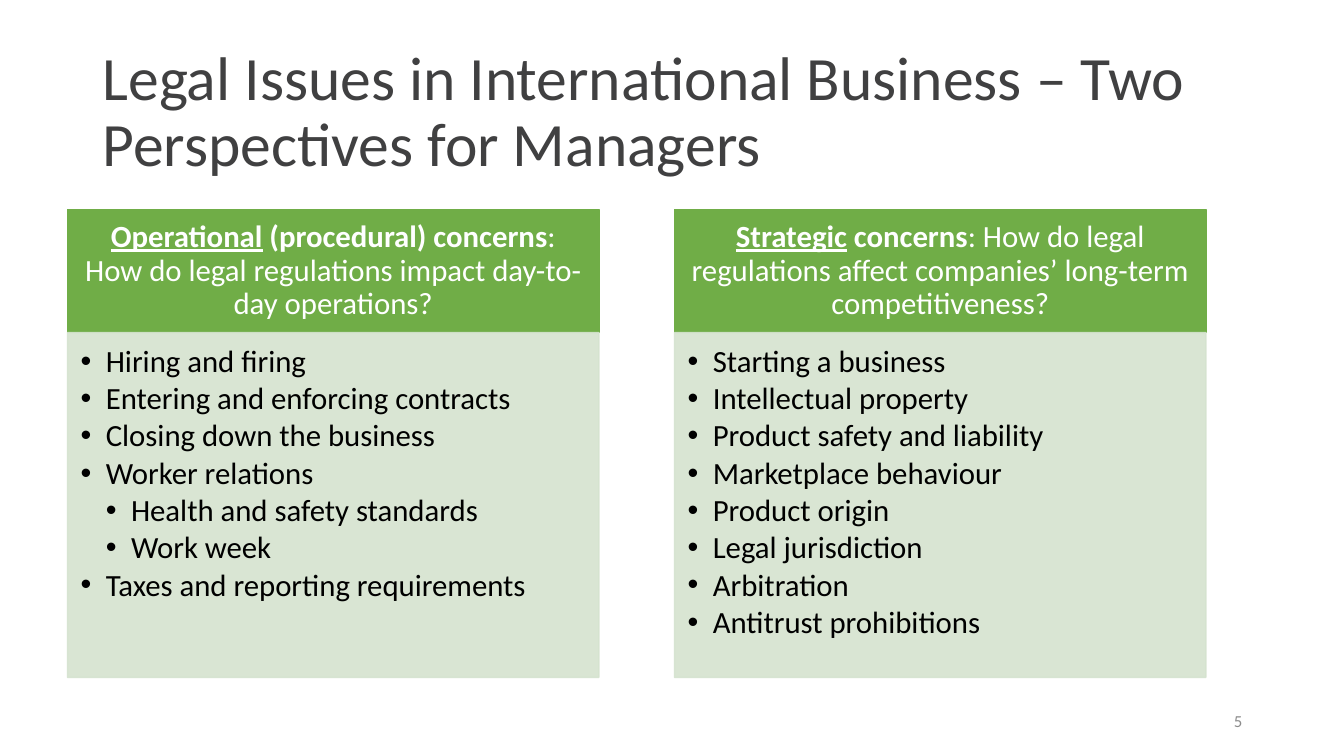
from lxml.etree import SubElement
from pptx import Presentation
from pptx.dml.color import RGBColor
from pptx.enum.shapes import MSO_SHAPE as Shape
from pptx.enum.text import MSO_ANCHOR as Anchor, PP_ALIGN as Align
from pptx.oxml.ns import qn
from pptx.util import Inches, Pt

COLUMNS = [
    (["Operational", " (procedural) concerns",
      ": How do legal regulations impact day-to-day operations?"],
     [("Hiring and firing", 1), ("Entering and enforcing contracts", 1),
      ("Closing down the business", 1), ("Worker relations", 1),
      ("Health and safety standards", 2), ("Work week", 2),
      ("Taxes and reporting requirements", 1)]),
    (["Strategic", " concerns",
      ": How do legal regulations affect companies’ long-term competitiveness?"],
     [("Starting a business", 1), ("Intellectual property", 1),
      ("Product safety and liability", 1), ("Marketplace behaviour", 1),
      ("Product origin", 1), ("Legal jurisdiction", 1),
      ("Arbitration", 1), ("Antitrust prohibitions", 1)]),
]


def color(value):
    return RGBColor.from_string(value)


def add_text(paragraph, text, size=22, fill="000000", bold=False, underline=False):
    run = paragraph.add_run()
    run.text = text
    run.font.name = "Calibri"
    run.font.size = Pt(size)
    run.font.color.rgb = color(fill)
    run.font.bold = bold
    run.font.underline = underline


def add_bullet(paragraph, level):
    properties = paragraph._p.get_or_add_pPr()
    properties.set("marL", str(Inches(0.25 * level)))
    properties.set("indent", str(Inches(-0.25)))
    SubElement(properties, qn("a:buFont"), typeface="Arial")
    SubElement(properties, qn("a:buChar"), char="•")


class SlideBuilder:
    """Holds the panel style and the slide being built."""

    green, pale = "70AD47", "D5E3CF"

    def __init__(self, presentation):
        self.slide = presentation.slides.add_slide(presentation.slide_layouts[6])

    def frame(self, shape, anchor, insets=(0.1, 0.05, 0.1, 0.05)):
        frame = shape.text_frame
        frame.word_wrap = True
        frame.vertical_anchor = anchor
        (frame.margin_left, frame.margin_top,
         frame.margin_right, frame.margin_bottom) = map(Inches, insets)
        return frame

    def label(self, box, text, align=Align.LEFT, spacing=1.0, **style):
        shape = self.slide.shapes.add_textbox(*map(Inches, box))
        paragraph = self.frame(shape, Anchor.MIDDLE).paragraphs[0]
        paragraph.alignment = align
        paragraph.line_spacing = spacing
        add_text(paragraph, text, **style)

    def panel(self, box, fill, opacity=100):
        shape = self.slide.shapes.add_shape(Shape.RECTANGLE, *map(Inches, box))
        shape.shadow.inherit = False
        shape.fill.solid()
        shape.fill.fore_color.rgb = color(fill)
        shape.line.color.rgb = color(fill)
        shape.line.width = Pt(1)
        if opacity < 100:
            for node in shape._element.spPr.iter(qn("a:srgbClr")):
                SubElement(node, qn("a:alpha"), val=str(opacity * 1000))
        return shape

    def header(self, box, parts):
        shape = self.panel(box, self.green)
        frame = self.frame(shape, Anchor.MIDDLE, (0.17, 0.1, 0.17, 0.1))
        paragraph = frame.paragraphs[0]
        paragraph.alignment = Align.CENTER
        paragraph.line_spacing = 0.9
        for index, part in enumerate(parts):
            add_text(paragraph, part, fill="FFFFFF", bold=index < 2, underline=index == 0)

    def bullets(self, box, items):
        shape = self.panel(box, self.pale, opacity=90)
        frame = self.frame(shape, Anchor.TOP, (0.13, 0.13, 0.17, 0.19))
        for index, (text, level) in enumerate(items):
            paragraph = frame.add_paragraph() if index else frame.paragraphs[0]
            paragraph.alignment = Align.LEFT
            paragraph.line_spacing = 0.9
            paragraph.space_after = Pt(2.9)
            add_bullet(paragraph, level)
            add_text(paragraph, text)


def main():
    presentation = Presentation()
    presentation.slide_width = Inches(13.33)
    presentation.slide_height = Inches(7.5)
    builder = SlideBuilder(presentation)
    builder.label((0.92, 0.4, 11.5, 1.45),
                  "Legal Issues in International Business – Two Perspectives for Managers",
                  spacing=0.9, size=44, fill="404041")
    builder.label((9.42, 6.95, 3, 0.4), "5", align=Align.RIGHT, size=12, fill="8C8C8C")
    for index, (heading, items) in enumerate(COLUMNS):
        left = 0.67 + 6.02 * index
        builder.header((left, 2.08, 5.27, 1.22), heading)
        builder.bullets((left, 3.3, 5.27, 3.42), items)
    presentation.save("out.pptx")


if __name__ == "__main__":
    main()
